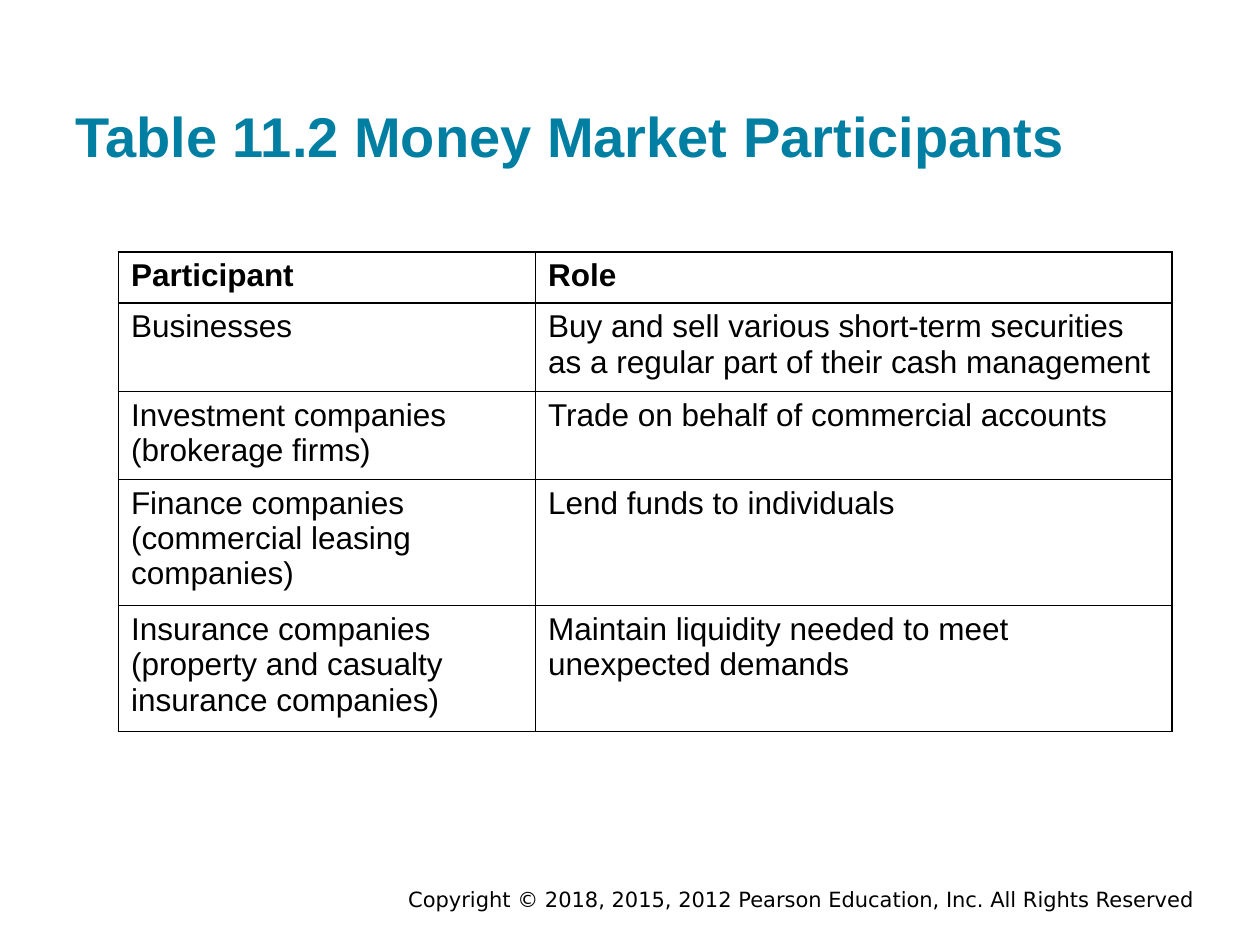
"""Build the slide listing money market participants and their roles."""
from dataclasses import dataclass

from lxml import etree
from pptx import Presentation
from pptx import util as u
from pptx.dml.color import RGBColor
from pptx.enum import text
from pptx.oxml import ns

WIDTH, HEIGHT = u.Inches(10), u.Inches(7.5)


@dataclass(frozen=True)
class Theme:
    """Colours, fonts and type sizes of the slide."""
    heading: str = "007FA3"
    ink: str = "000000"
    paper: str = "FFFFFF"
    font: str = "Arial"
    footer_font: str = "DejaVu Sans"
    heading_size: int = 32
    body_size: int = 18
    footer_size: int = 12
    border: int = 1


THEME = Theme()

PARTICIPANTS = [
    ("Participant", "Role"),
    ("Businesses",
     "Buy and sell various short-term securities as a regular part of their cash management"),
    ("Investment companies (brokerage firms)", "Trade on behalf of commercial accounts"),
    ("Finance companies (commercial leasing companies)", "Lend funds to individuals"),
    ("Insurance companies (property and casualty insurance companies)",
     "Maintain liquidity needed to meet unexpected demands"),
]


def across(share):
    """Return a percentage of the slide width."""
    return u.Emu(int(WIDTH * share / 100))


def down(share):
    """Return a percentage of the slide height."""
    return u.Emu(int(HEIGHT * share / 100))


def write(paragraph, wording, size, color=THEME.ink, font=THEME.font, bold=False):
    """Add one styled run to a paragraph."""
    run = paragraph.add_run()
    run.text = wording
    run.font.name, run.font.size, run.font.bold = font, u.Pt(size), bold
    run.font.color.rgb = RGBColor.from_string(color)


def add_line_of_text(slide, box, anchor, align, margin, wording, **style):
    """Add a text box holding a single paragraph."""
    left, top, width, height = box
    frame = slide.shapes.add_textbox(
        across(left), down(top), across(width), down(height)).text_frame
    frame.word_wrap = True
    frame.vertical_anchor = anchor
    frame.margin_top = frame.margin_bottom = u.Inches(margin)
    frame.paragraphs[0].alignment = align
    write(frame.paragraphs[0], wording, **style)


def outline(cell):
    """Rule all four sides of a table cell."""
    properties = cell._tc.get_or_add_tcPr()
    for position, side in enumerate(("a:lnL", "a:lnR", "a:lnT", "a:lnB")):
        rule = etree.Element(ns.qn(side), w=str(u.Pt(THEME.border)))
        fill = etree.SubElement(rule, ns.qn("a:solidFill"))
        etree.SubElement(fill, ns.qn("a:srgbClr"), val=THEME.ink)
        properties.insert(position, rule)


def add_participants(slide):
    """Add the ruled table of participants and roles."""
    row_height = down(5.4)
    table = slide.shapes.add_table(
        len(PARTICIPANTS), 2, across(9.4), down(26.67),
        across(83.6), row_height * len(PARTICIPANTS)).table
    table.horz_banding = False
    for column, share in zip(table.columns, (33.1, 50.5)):
        column.width = across(share)
    for row, entries in enumerate(PARTICIPANTS):
        for column, wording in enumerate(entries):
            cell = table.cell(row, column)
            cell.fill.solid()
            cell.fill.fore_color.rgb = RGBColor.from_string(THEME.paper)
            outline(cell)
            write(cell.text_frame.paragraphs[0], wording, THEME.body_size, bold=row == 0)


def main():
    """Assemble and save the slide."""
    deck = Presentation()
    deck.slide_width, deck.slide_height = WIDTH, HEIGHT
    slide = deck.slides.add_slide(deck.slide_layouts[6])
    add_line_of_text(
        slide, (17.5, 93.73, 78.3, 2.93), text.MSO_ANCHOR.MIDDLE, text.PP_ALIGN.RIGHT, 0.05,
        "Copyright © 2018, 2015, 2012 Pearson Education, Inc. All Rights Reserved",
        size=THEME.footer_size, font=THEME.footer_font)
    add_line_of_text(
        slide, (5, 3.2, 92.4, 16), text.MSO_ANCHOR.BOTTOM, text.PP_ALIGN.LEFT, 0.1,
        "Table 11.2 Money Market Participants",
        size=THEME.heading_size, color=THEME.heading, bold=True)
    add_participants(slide)
    deck.save("out.pptx")


if __name__ == "__main__":
    main()
